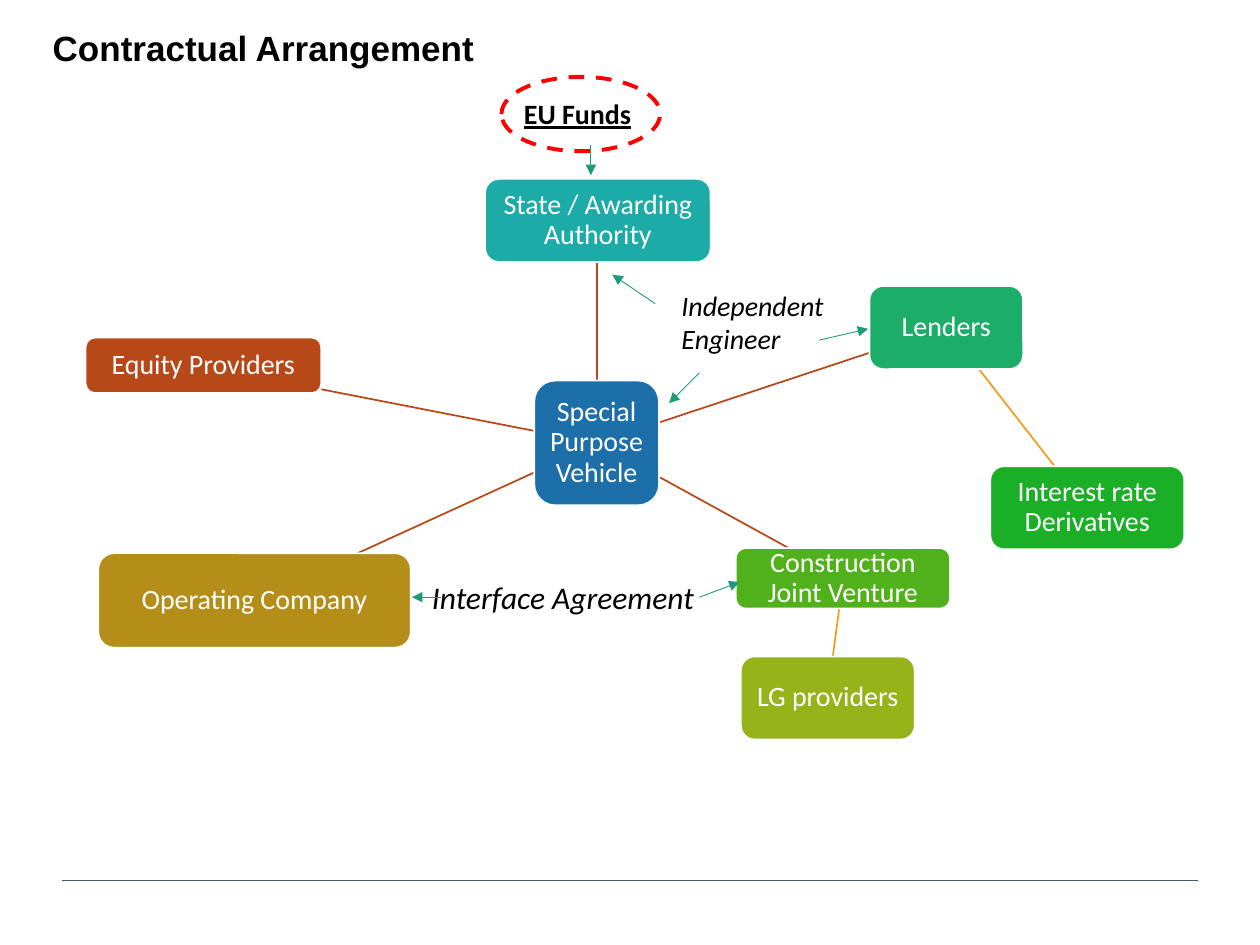
"""Build the contractual arrangement slide: a special purpose vehicle and its parties."""
from dataclasses import dataclass, field
from typing import Optional

import pptx
import pptx.dml.color
import pptx.enum.dml
import pptx.enum.shapes
import pptx.enum.text
import pptx.oxml
import pptx.oxml.ns
import pptx.util

RGBColor = pptx.dml.color.RGBColor
Shapes = pptx.enum.shapes.MSO_SHAPE
Anchor = pptx.enum.text.MSO_ANCHOR
Align = pptx.enum.text.PP_ALIGN

WHITE = RGBColor(0xFF, 0xFF, 0xFF)
BLACK = RGBColor(0x00, 0x00, 0x00)
RED = RGBColor(0xFF, 0x00, 0x00)
SLATE = RGBColor(0x44, 0x54, 0x6A)
BLUE = RGBColor(0x1D, 0x6F, 0xA9)
TURQUOISE = RGBColor(0x1C, 0xAB, 0xA7)
JADE = RGBColor(0x1C, 0xAD, 0x68)
GREEN = RGBColor(0x1B, 0xAF, 0x27)
GRASS = RGBColor(0x51, 0xB1, 0x1B)
OLIVE = RGBColor(0x96, 0xB3, 0x1A)
OCHRE = RGBColor(0xB5, 0x8E, 0x1A)
RUST = RGBColor(0xB7, 0x49, 0x19)
ORANGE = RGBColor(0xF1, 0x9D, 0x19)
TEAL = RGBColor(0x1D, 0x9A, 0x78)

SLIDE_WIDTH, SLIDE_HEIGHT = pptx.util.Inches(10), pptx.util.Inches(7.5)
COLUMNS, ROWS = 100, 75
PARTY_INSET = pptx.util.Inches(0.04)


@dataclass(frozen=True)
class Area:
    """A rectangle in grid columns and rows."""
    column: float
    row: float
    columns: float
    rows: float

    def lengths(self) -> tuple[int, int, int, int]:
        """Return left, top, width and height on the slide."""
        return (across(self.column), down(self.row), across(self.columns), down(self.rows))


@dataclass(frozen=True)
class Party:
    """A contract party shown as a rounded box."""
    title: str
    area: Area
    color: RGBColor


@dataclass(frozen=True)
class Link:
    """A straight line between two grid points."""
    start: tuple[float, float]
    end: tuple[float, float]
    color: RGBColor = RUST
    weight: float = 1
    arrow: bool = False


@dataclass(frozen=True)
class Label:
    """Free text on the slide, with its font values."""
    text: str
    area: Area
    font: dict = field(default_factory=dict)
    anchor: Anchor = Anchor.TOP


PARTIES = [
    Party("Special Purpose Vehicle", Area(42.4, 30.2, 9.9, 9.9), BLUE),
    Party("State / Awarding Authority", Area(38.5, 14.2, 17.9, 6.6), TURQUOISE),
    Party("Lenders", Area(69, 22.7, 12.2, 6.6), JADE),
    Party("Interest rate Derivatives", Area(78.6, 37, 15.4, 6.6), GREEN),
    Party("Construction Joint Venture", Area(58.4, 43.5, 17, 4.8), GRASS),
    Party("LG providers", Area(58.8, 52.1, 13.8, 6.6), OLIVE),
    Party("Operating Company", Area(7.8, 43.9, 24.8, 7.5), OCHRE),
    Party("Equity Providers", Area(6.8, 26.8, 18.7, 4.4), RUST),
]

CONTRACTS = [
    Link((42.4, 34.2), (25.5, 30.9)),
    Link((42.4, 37.5), (28.4, 43.9)),
    Link((52.4, 37.9), (62.6, 43.5)),
    Link((52.4, 33.5), (69, 28)),
    Link((47.4, 30.2), (47.4, 20.9)),
    Link((77.7, 29.3), (83.7, 37), ORANGE),
    Link((66.6, 48.3), (66.1, 52.1), ORANGE),
]

ARROWS = [
    Link(start, end, TEAL, 0.5, True)
    for start, end in [
        ((35, 47.4), (32.7, 47.4)),
        ((55.5, 47.4), (58.7, 46.2)),
        ((46.9, 11.5), (46.9, 13.9)),
        ((52, 24.1), (48.6, 21.8)),
        ((55.5, 29.6), (53.1, 32)),
        ((65, 27), (68.9, 26.1)),
    ]
]

LABELS = [
    Label("Contractual Arrangement", Area(3.2, -0.4, 85, 6.3),
          {"name": "Arial", "size": pptx.util.Pt(20), "bold": True}, Anchor.BOTTOM),
    Label("Interface Agreement", Area(33.3, 45.4, 24.8, 4),
          {"size": pptx.util.Pt(18), "italic": True}),
    Label("Independent Engineer", Area(53.1, 22.4, 15.7, 6.4), {"italic": True}),
    Label("EU Funds", Area(40.6, 7.2, 22.9, 3.7), {"bold": True, "underline": True}),
]

FUNDS_RING = Area(39.8, 6.1, 12.6, 5.9)
FOOTER_RULE = Link((4.9, 69.9), (95.1, 69.9), SLATE, 0.5)


def across(columns: float) -> int:
    """Turn grid columns into a length."""
    return round(SLIDE_WIDTH * columns / COLUMNS)


def down(rows: float) -> int:
    """Turn grid rows into a length."""
    return round(SLIDE_HEIGHT * rows / ROWS)


def write(shape, text: str, color: RGBColor, frame_format: dict, font_format: dict,
          paragraph_format: Optional[dict] = None) -> None:
    """Fill a shape with one formatted paragraph."""
    frame = shape.text_frame
    paragraph = frame.paragraphs[0]
    run = paragraph.add_run()
    run.text = text
    run.font.color.rgb = color
    font_values = {"name": "Calibri", "size": pptx.util.Pt(16)} | font_format
    for target, values in ((frame, {"word_wrap": True} | frame_format),
                           (paragraph, paragraph_format or {}),
                           (run.font, font_values)):
        for attribute, value in values.items():
            setattr(target, attribute, value)


def draw_outline(slide, preset: Shapes, area: Area, fill: RGBColor, line: RGBColor,
                 weight: float):
    """Add a filled preset shape with a coloured line."""
    shape = slide.shapes.add_shape(preset, *area.lengths())
    shape.shadow.inherit = False
    shape.fill.solid()
    shape.fill.fore_color.rgb = fill
    shape.line.color.rgb = line
    shape.line.width = pptx.util.Pt(weight)
    return shape


def draw_party(slide, party: Party) -> None:
    """Add a party's rounded box with its title."""
    box = draw_outline(slide, Shapes.ROUNDED_RECTANGLE, party.area, party.color, WHITE, 1)
    margins = {f"margin_{side}": PARTY_INSET for side in ("left", "top", "right", "bottom")}
    write(box, party.title, WHITE, margins | {"vertical_anchor": Anchor.MIDDLE}, {},
          {"alignment": Align.CENTER, "line_spacing": 0.9})


def draw_link(slide, link: Link) -> None:
    """Add a straight connector, with an arrowhead where asked."""
    (x1, y1), (x2, y2) = link.start, link.end
    connector = slide.shapes.add_connector(
        pptx.enum.shapes.MSO_CONNECTOR.STRAIGHT, across(x1), down(y1), across(x2), down(y2))
    connector.line.color.rgb = link.color
    connector.line.width = pptx.util.Pt(link.weight)
    if link.arrow:
        head = pptx.oxml.parse_xml(
            f'<a:tailEnd {pptx.oxml.ns.nsdecls("a")} type="triangle"/>')
        connector.line._get_or_add_ln().append(head)
    connector._element.spPr.append(
        pptx.oxml.parse_xml(f'<a:effectLst {pptx.oxml.ns.nsdecls("a")}/>'))


def draw_label(slide, label: Label) -> None:
    """Add a text box for a label."""
    box = slide.shapes.add_textbox(*label.area.lengths())
    write(box, label.text, BLACK, {"vertical_anchor": label.anchor}, label.font)


def main() -> None:
    """Draw the slide and save it."""
    deck = pptx.Presentation()
    deck.slide_width, deck.slide_height = SLIDE_WIDTH, SLIDE_HEIGHT
    slide = deck.slides.add_slide(deck.slide_layouts[6])
    draw_link(slide, FOOTER_RULE)
    ring = draw_outline(slide, Shapes.OVAL, FUNDS_RING, WHITE, RED, 2.25)
    ring.line.dash_style = pptx.enum.dml.MSO_LINE.DASH
    for draw, items in ((draw_link, CONTRACTS), (draw_party, PARTIES),
                        (draw_label, LABELS), (draw_link, ARROWS)):
        for item in items:
            draw(slide, item)
    deck.save("out.pptx")


if __name__ == "__main__":
    main()
